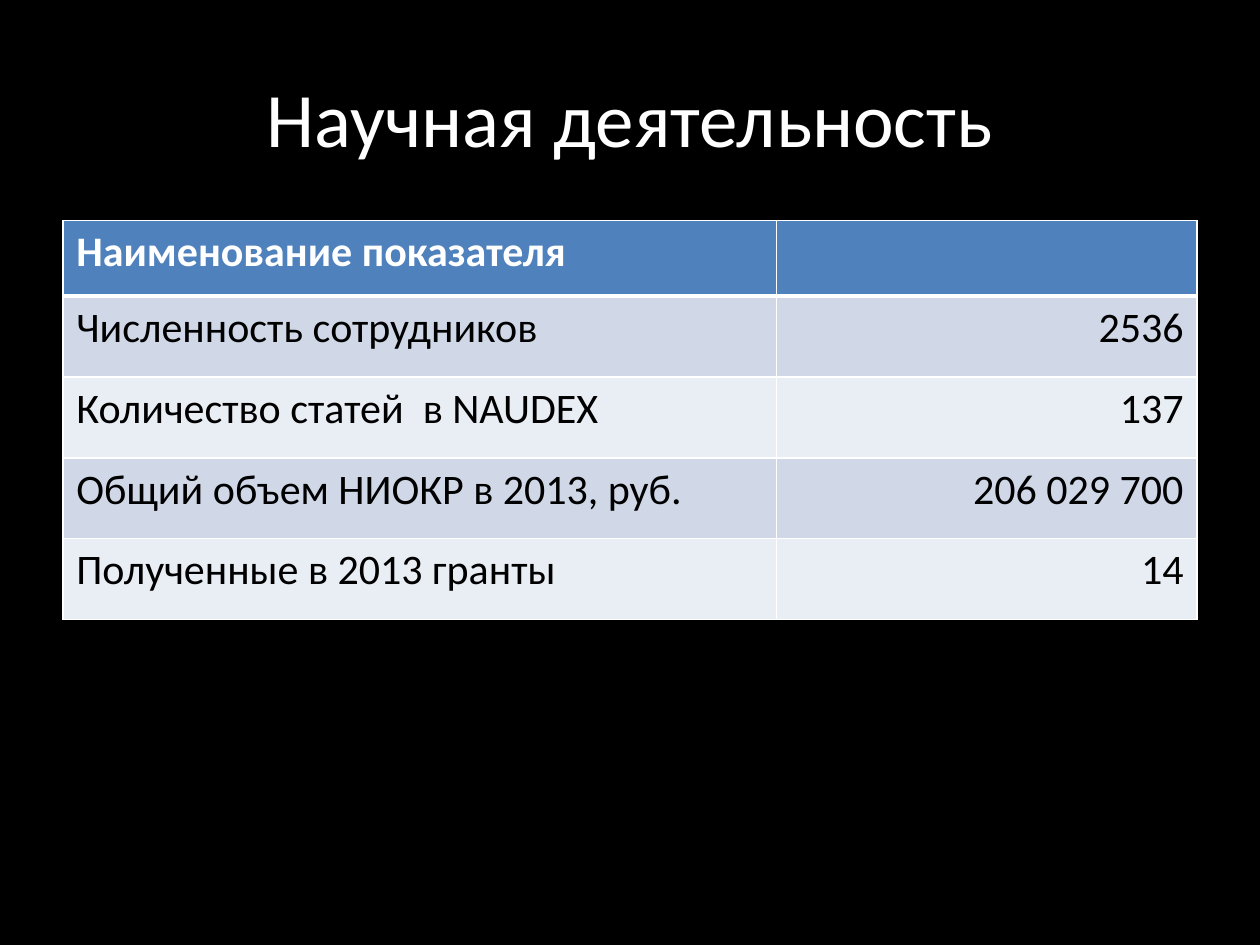
import lxml.etree
import pptx
import pptx.dml.color
import pptx.enum.text
import pptx.oxml.ns
import pptx.util
from pptx.util import Cm

FONT = "Calibri"
WHITE, BLACK = "FFFFFF", "000000"
HEADER_FILL = "4F81BD"
BAND_FILLS = ("D0D8E8", "E9EDF4")
ALIGN = pptx.enum.text.PP_ALIGN

ROWS = [
    ("Наименование показателя", ""),
    ("Численность сотрудников", "2536"),
    ("Количество статей  в NAUDEX", "137"),
    ("Общий объем НИОКР в 2013, руб.", "206 029 700"),
    ("Полученные в 2013 гранты", "14"),
]
COLUMN_WIDTHS = (Cm(14.38), Cm(8.48))
HEADER_HEIGHT, ROW_HEIGHT = Cm(1.52), Cm(1.63)


def color(hex_value):
    return pptx.dml.color.RGBColor.from_string(hex_value)


def fill_solid(fill, hex_value):
    fill.solid()
    fill.fore_color.rgb = color(hex_value)


def write(text_frame, text, size, hex_value, alignment, bold=False):
    text_frame.text = text
    paragraph = text_frame.paragraphs[0]
    paragraph.alignment = alignment
    paragraph.font.size = pptx.util.Pt(size)
    for run in paragraph.runs:
        run.font.name = FONT
        run.font.size = pptx.util.Pt(size)
        run.font.bold = bold
        run.font.color.rgb = color(hex_value)


def add_border(cell, side, width):
    """Draw one white edge; call before filling, as the schema wants lines first."""
    qn = pptx.oxml.ns.qn
    properties = cell._tc.get_or_add_tcPr()
    line = lxml.etree.SubElement(properties, qn(f"a:ln{side}"), w=str(pptx.util.Pt(width)))
    solid = lxml.etree.SubElement(line, qn("a:solidFill"))
    lxml.etree.SubElement(solid, qn("a:srgbClr"), val=WHITE)


def add_title(slide, text):
    box = slide.shapes.add_textbox(Cm(1.27), Cm(0.76), Cm(22.86), Cm(3.18))
    box.text_frame.word_wrap = True
    box.text_frame.vertical_anchor = pptx.enum.text.MSO_ANCHOR.MIDDLE
    write(box.text_frame, text, 44, WHITE, ALIGN.CENTER)


def format_cell(cell, text, row_index, column_index):
    is_header = row_index == 0
    cell.margin_left = cell.margin_right = Cm(0.27)
    for side in "LRTB":
        is_thick = (is_header and side == "B") or (row_index == 1 and side == "T")
        add_border(cell, side, 3 if is_thick else 1)
    fill_solid(cell.fill, HEADER_FILL if is_header else BAND_FILLS[(row_index - 1) % 2])
    alignment = ALIGN.RIGHT if column_index else ALIGN.LEFT
    write(cell.text_frame, text, 24, WHITE if is_header else BLACK, alignment, is_header)


def add_indicator_table(slide):
    heights = [HEADER_HEIGHT] + [ROW_HEIGHT] * (len(ROWS) - 1)
    table = slide.shapes.add_table(
        len(ROWS), len(COLUMN_WIDTHS), Cm(1.27), Cm(4.45), sum(COLUMN_WIDTHS), sum(heights)
    ).table
    for column, width in zip(table.columns, COLUMN_WIDTHS):
        column.width = width
    for row_index, texts in enumerate(ROWS):
        table.rows[row_index].height = heights[row_index]
        for column_index, text in enumerate(texts):
            format_cell(table.cell(row_index, column_index), text, row_index, column_index)


def main():
    presentation = pptx.Presentation()
    presentation.slide_width, presentation.slide_height = Cm(25.4), Cm(19.05)
    slide = presentation.slides.add_slide(presentation.slide_layouts[6])
    fill_solid(slide.background.fill, BLACK)
    add_title(slide, "Научная деятельность")
    add_indicator_table(slide)
    presentation.save("out.pptx")


if __name__ == "__main__":
    main()
